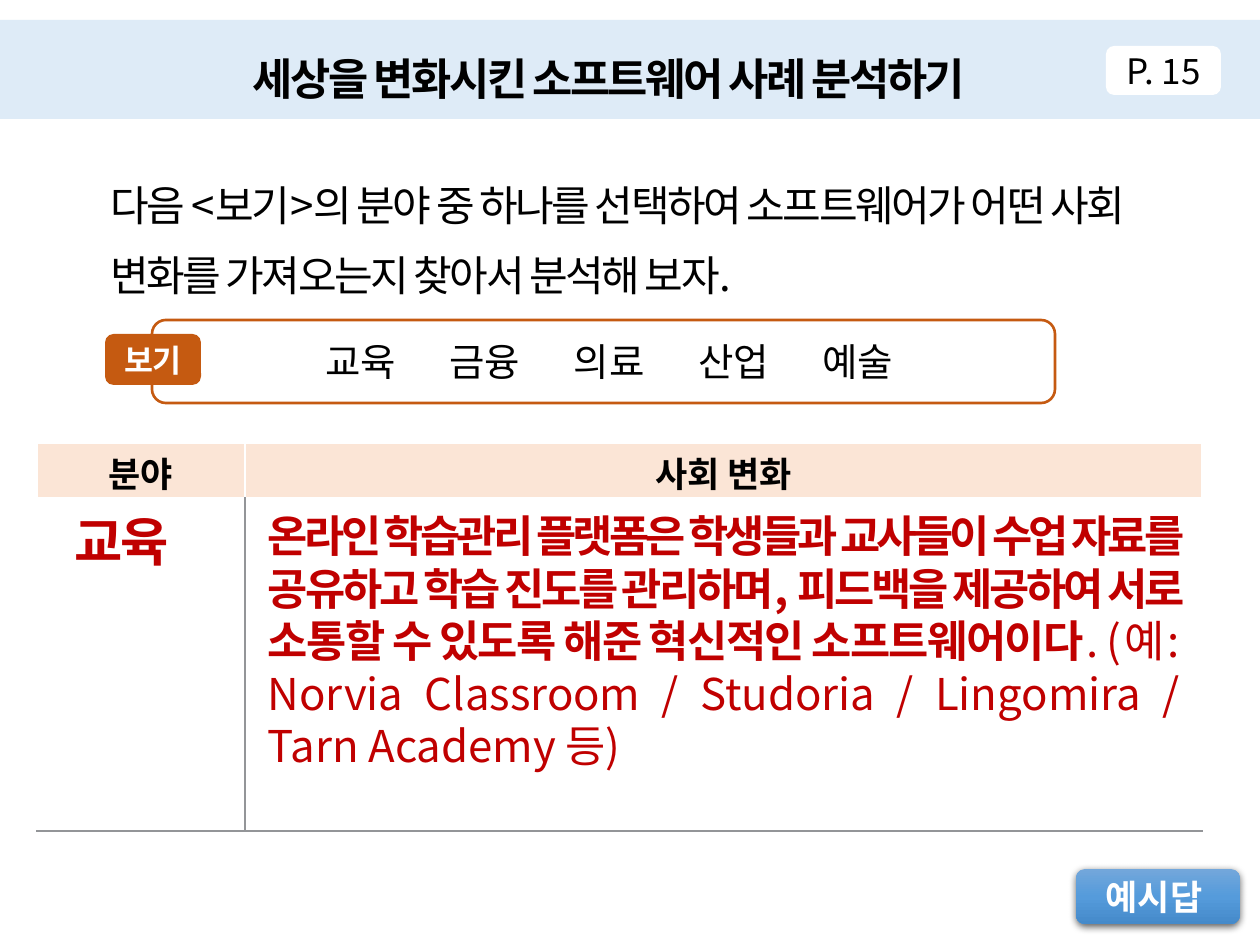
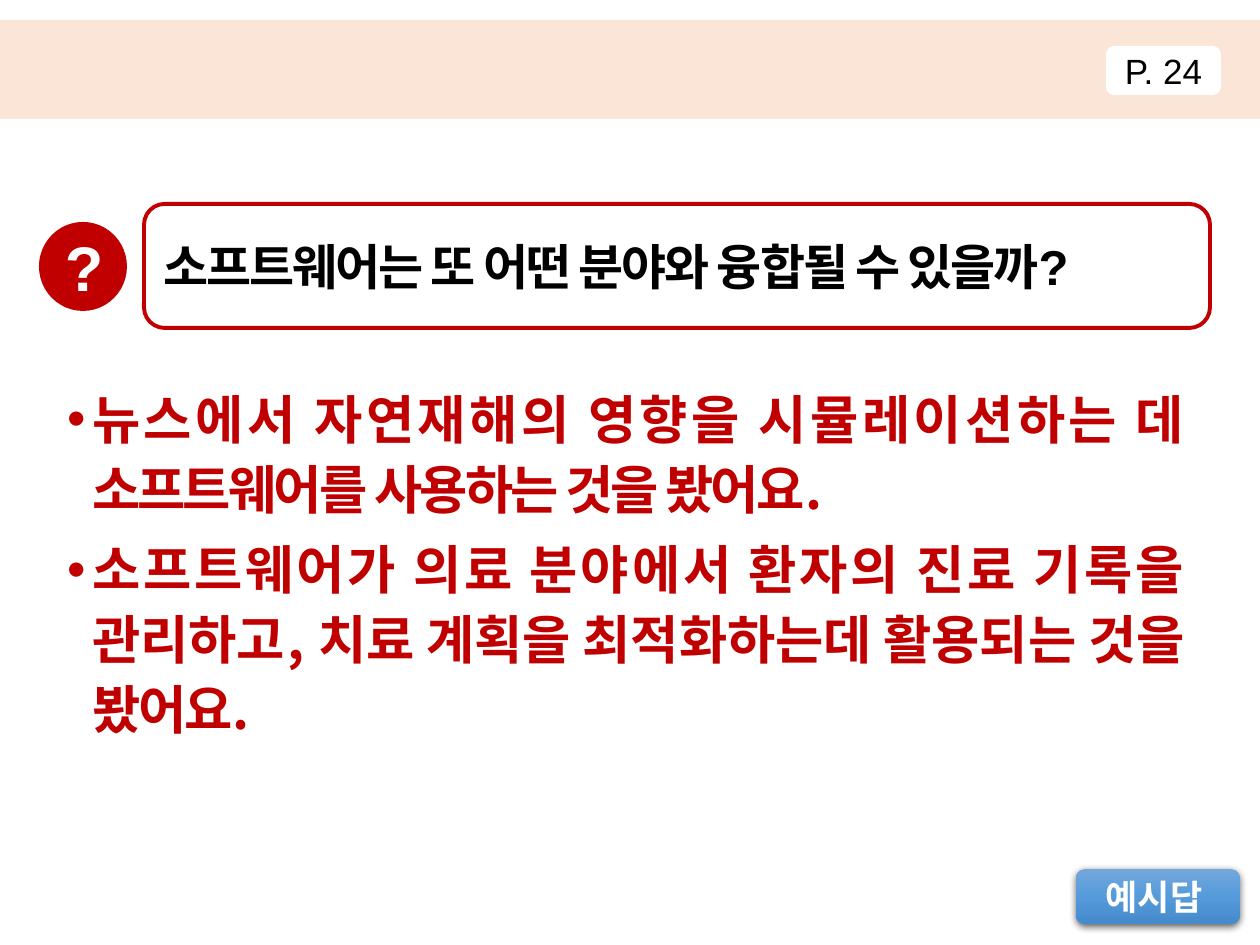
from pptx import Presentation
from pptx.dml.color import RGBColor
from pptx.enum.shapes import MSO_SHAPE as Kind
from pptx.enum.text import MSO_ANCHOR as Anchor, MSO_AUTO_SIZE as Fit, PP_ALIGN as Align
from pptx.oxml import parse_xml
from pptx.oxml.ns import nsdecls, qn
from pptx.util import Pt

PX = 914400 / 126
NS = nsdecls("a")
KO, LATIN = "Noto Sans CJK KR", "Arial"
HUE = {
    "black": "000000", "white": "FFFFFF", "red": "C00000", "rust": "C55A11",
    "sky": "DEEBF7", "peach": "FBE5D6", "gray": "939598",
    "top": "73A7DB", "mid": "559BDB", "low": "458ACA",
}
TIGHT = (5, 6, 5, 6)


def box(slide, kind, *place, fill=None, line=None, width=1, inset=(13, 6, 13, 6)):
    """Add a preset shape, or a text box if kind is None; place is in px."""
    place = [round(n * PX) for n in place]
    if kind is None:
        item = slide.shapes.add_textbox(*place)
    else:
        item = slide.shapes.add_shape(kind, *place)
        item.shadow.inherit = False
        if fill:
            item.fill.solid()
            item.fill.fore_color.rgb = RGBColor.from_string(HUE[fill])
        else:
            item.fill.background()
        if line:
            item.line.color.rgb = RGBColor.from_string(HUE[line])
            item.line.width = Pt(width)
        else:
            item.line.fill.background()
    frame = item.text_frame
    frame.word_wrap = True
    frame.vertical_anchor = Anchor.MIDDLE if kind else Anchor.TOP
    for side, n in zip(("left", "top", "right", "bottom"), inset):
        setattr(frame, "margin_" + side, round(n * PX))
    return item


def write(para, text, size=20, color="black", bold=False, face=KO,
          gap=0, align=Align.CENTER, lead=None):
    """Add a run; gap is letter spacing and lead is line height, in points."""
    para.alignment = align
    if lead:
        para.line_spacing = Pt(lead)
    run = para.add_run()
    run.text = text
    font = run.font
    font.size, font.bold, font.name = Pt(size), bold, face
    font.color.rgb = RGBColor.from_string(HUE[color])
    props = run._r.get_or_add_rPr()
    props.set("spc", str(round(gap * 100)))
    props.find(qn("a:latin")).addnext(parse_xml(f'<a:ea {NS} typeface="{KO}"/>'))


deck = Presentation()
deck.slide_width, deck.slide_height = round(1260 * PX), round(945 * PX)

# Band, page tag and answer button on both slides
pages = []
for layout, tint, page, face in ((5, "sky", "P. 15", KO), (6, "peach", "P. 24", LATIN)):
    slide = deck.slides.add_slide(deck.slide_layouts[layout])
    pages.append(slide)
    box(slide, Kind.RECTANGLE, 0, 20, 1260, 99, fill=tint)
    tag = box(slide, Kind.ROUNDED_RECTANGLE, 1106, 46, 115, 49, fill="white")
    write(tag.text_frame.paragraphs[0], page, face=face)

    button = box(slide, Kind.ROUNDED_RECTANGLE, 1076, 869, 164, 55, fill="mid")
    write(button.text_frame.paragraphs[0], "예시답 ", color="white", bold=True)
    props = button._element.spPr
    stops = "".join(
        f'<a:gs pos="{at}"><a:srgbClr val="{HUE[name]}"/></a:gs>'
        for at, name in ((0, "top"), (50000, "mid"), (100000, "low")))
    props.replace(props.find(qn("a:solidFill")), parse_xml(
        f'<a:gradFill {NS}><a:gsLst>{stops}</a:gsLst><a:lin ang="5400000"/></a:gradFill>'))
    props.find(qn("a:effectLst")).append(parse_xml(
        f'<a:outerShdw {NS} blurRad="{Pt(4.5)}" dist="{Pt(1.5)}" dir="5400000" rotWithShape="0">'
        f'<a:srgbClr val="{HUE["black"]}"><a:alpha val="63000"/></a:srgbClr></a:outerShdw>'))

study, query = pages

# Slide 1: title above its band
title = study.shapes.title
title.left, title.top, title.width, title.height = [round(n * PX) for n in (248, 28, 819, 83)]
frame = title.text_frame
frame.auto_size, frame.vertical_anchor, frame.word_wrap = Fit.NONE, Anchor.TOP, True
for side, n in zip(("left", "top", "right", "bottom"), TIGHT):
    setattr(frame, "margin_" + side, round(n * PX))
write(frame.paragraphs[0], "세상을 변화시킨 소프트웨어 사례 분석하기", size=25, bold=True,
      gap=-1.4, align=Align.LEFT, lead=40)
study.shapes._spTree.append(title._element)

task = box(study, None, 105, 154, 1116, 146, inset=TIGHT)
write(task.text_frame.paragraphs[0],
      "다음 <보기>의 분야 중 하나를 선택하여 소프트웨어가 어떤 사회 변화를 가져오는지 찾아서 분석해 보자.",
      size=24, gap=-1.4, align=Align.LEFT, lead=40)

# Choices on even tab stops
fields = ("교육", "금융", "의료", "산업", "예술")
choice = box(study, Kind.ROUNDED_RECTANGLE, 152, 320, 903, 83, line="rust", width=1.5,
             inset=(169, 6, 13, 6))
para = choice.text_frame.paragraphs[0]
tabs = "".join(f'<a:tab pos="{round(124.4 * n * PX)}" algn="l"/>' for n in range(1, len(fields)))
para._p.get_or_add_pPr().append(parse_xml(f"<a:tabLst {NS}>{tabs}</a:tabLst>"))
write(para, "\t".join(fields), size=22, align=Align.LEFT)
label = box(study, Kind.ROUNDED_RECTANGLE, 105, 334, 96, 51, fill="rust", inset=TIGHT)
label.text_frame.word_wrap = False
write(label.text_frame.paragraphs[0], "보기", size=18, color="white", bold=True, gap=-1)

# Table
grid = study.shapes.add_table(2, 2, *[round(n * PX) for n in (37, 443, 1165, 388)]).table
grid.first_row = grid.horz_banding = False
for col, n in zip(grid.columns, (208, 957)):
    col.width = round(n * PX)
for row, n in zip(grid.rows, (55, 333)):
    row.height = round(n * PX)
for c, head in enumerate(("분야", "사회 변화")):
    top, low = grid.cell(0, c), grid.cell(1, c)
    top.fill.solid()
    top.fill.fore_color.rgb = RGBColor.from_string(HUE["peach"])
    top.vertical_anchor = Anchor.MIDDLE
    top.margin_top, top.margin_bottom = round(4 * PX), 0
    write(top.text_frame.paragraphs[0], head, bold=True)
    low.fill.background()
    inner = {"L": "gray" if c else "white", "R": "white" if c else "gray", "B": "gray"}
    for cell, edges in ((top, dict.fromkeys("LRT", "white")), (low, inner)):
        for n, (side, name) in enumerate(edges.items()):
            cell._tc.get_or_add_tcPr().insert(n, parse_xml(
                f'<a:ln{side} {NS} w="{Pt(1)}"><a:solidFill><a:srgbClr val="{HUE[name]}"/>'
                f"</a:solidFill></a:ln{side}>"))

# Answers over the table
field = box(study, None, 32, 503, 179, 77, inset=TIGHT)
write(field.text_frame.paragraphs[0], "교육", size=30, color="red", bold=True, gap=-1)
change = box(study, None, 263, 503, 922, 277, inset=TIGHT)
for text, bold, gap in (
    ("온라인 학습관리 플랫폼은 학생들과 교사들이 수업 자료를 공유하고 학습 진도를 관리하며, "
     "피드백을 제공하여 서로 소통할 수 있도록 해준 혁신적인 소프트웨어이다", True, -2.6),
    (". ", False, -2.6),
    ("(예: Norvia Classroom / Studoria / Lingomira / Tarn Academy 등)", False, 0),
):
    write(change.text_frame.paragraphs[0], text, size=25, color="red", bold=bold,
          gap=gap, align=Align.JUSTIFY)

# Slide 2: question
mark = box(query, Kind.OVAL, 39, 222, 88, 89, fill="red")
write(mark.text_frame.paragraphs[0], "?", size=36, color="white", bold=True, face=LATIN)
ask = box(query, Kind.ROUNDED_RECTANGLE, 144, 204, 1066, 124, fill="white", line="red", width=2.25)
write(ask.text_frame.paragraphs[0], "소프트웨어는 또 어떤 분야와 융합될 수 있을까?", size=28,
      bold=True, face=LATIN, gap=-1.1, align=Align.LEFT)

# Bulleted replies
reply = box(query, None, 54, 374, 1142, 377).text_frame
for n, (text, gap) in enumerate((
    ("뉴스에서 자연재해의 영향을 시뮬레이션하는 데 소프트웨어를 사용하는 것을 봤어요.", -1.6),
    ("소프트웨어가 의료 분야에서 환자의 진료 기록을 관리하고, "
     "치료 계획을 최적화하는데 활용되는 것을 봤어요.", -1.2),
)):
    para = reply.add_paragraph() if n else reply.paragraphs[0]
    props = para._p.get_or_add_pPr()
    props.set("marL", str(round(25 * PX)))
    props.set("indent", str(round(-25 * PX)))
    for part in (f'<a:buClr {NS}><a:srgbClr val="{HUE["red"]}"/></a:buClr>',
                 f'<a:buFont {NS} typeface="{LATIN}"/>', f'<a:buChar {NS} char="•"/>'):
        props.append(parse_xml(part))
    if n:
        para.space_before = Pt(6)
    write(para, text, size=30, color="red", bold=True, gap=gap, align=Align.JUSTIFY, lead=40)

deck.save("out.pptx")
